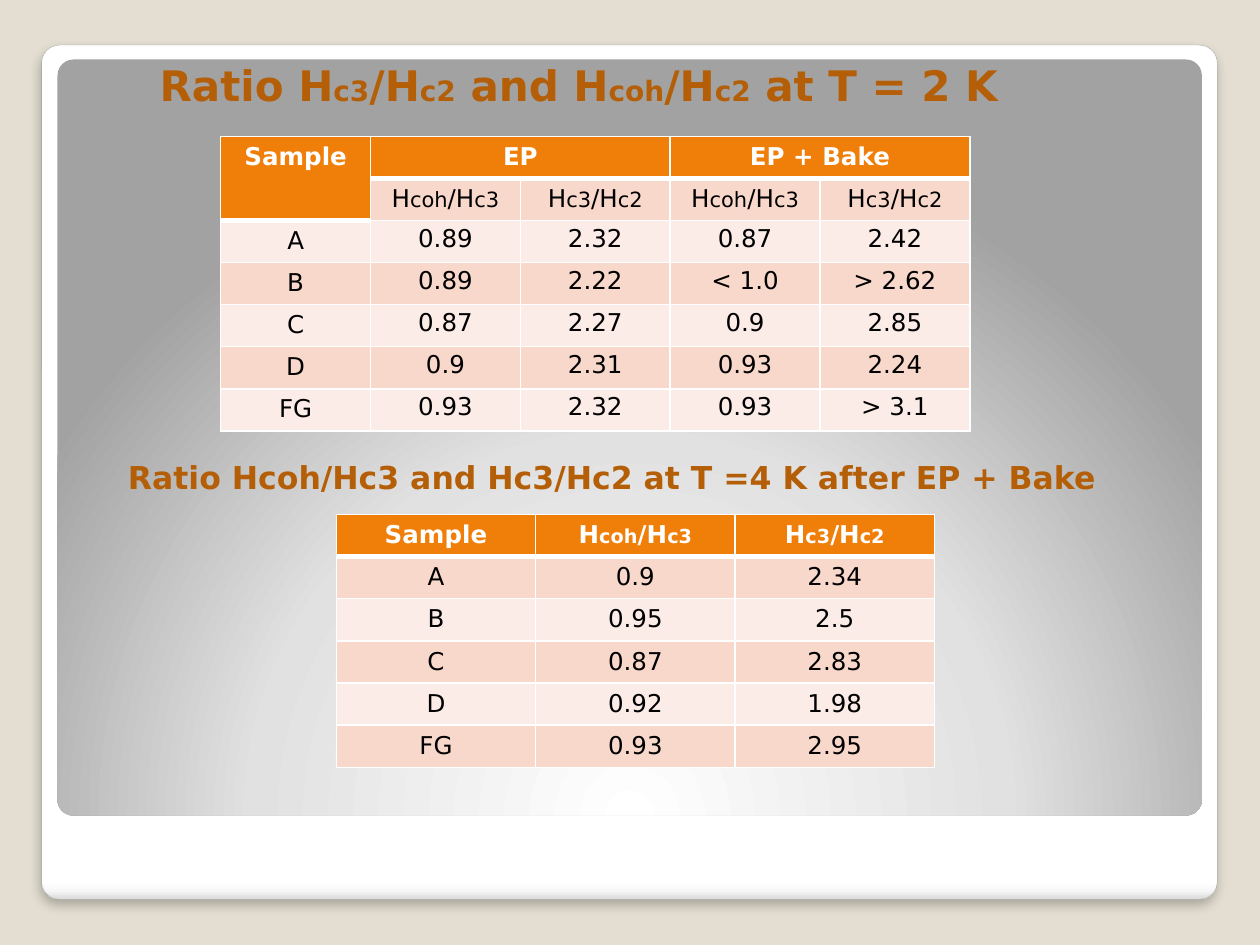
from pptx import Presentation
from pptx.dml.color import RGBColor
from pptx.enum.shapes import MSO_SHAPE as Shape
from pptx.enum.text import MSO_ANCHOR as Anchor, PP_ALIGN as Align
from pptx.oxml import parse_xml
from pptx.oxml.ns import nsdecls, qn
from pptx.util import Cm, Pt

WHITE = RGBColor(0xFF, 0xFF, 0xFF)
BLACK = RGBColor(0x00, 0x00, 0x00)
SAND = RGBColor(0xE3, 0xDE, 0xD1)
GREY = RGBColor(0xA4, 0xA4, 0xA4)
BROWN = RGBColor(0xB4, 0x5F, 0x07)
ORANGE = RGBColor(0xF0, 0x7F, 0x09)
ROSE = RGBColor(0xF9, 0xD8, 0xCC)
PALE_ROSE = RGBColor(0xFC, 0xEC, 0xE7)

DOWNWARD = '<a:lin ang="5400000" scaled="0"/>'
FROM_BELOW = ('<a:path path="circle">'
              '<a:fillToRect l="50000" t="175000" r="50000" b="-75000"/></a:path>')
FRAME_STOPS = [(0, WHITE), (98, WHITE), (99, "F7F7F7"), (100, "DADADA")]
PANEL_STOPS = [(0, WHITE), (55, "E1E1E1"), (100, "A2A2A2")]

TIGHT_CELL = {"margin_left": Cm(0.18), "margin_right": Cm(0.18),
              "margin_top": 0, "margin_bottom": 0}
TIGHT_PARAGRAPH = {"line_spacing": 1.15, "space_after": Pt(10)}

RATIOS = ["H_coh_/H_c3_", "H_c3_/H_c2_"]
RATIOS_2K = [
    ["Sample", "EP", "", "EP + Bake", ""],
    ["", *RATIOS, *RATIOS],
    ["A", "0.89", "2.32", "0.87", "2.42"],
    ["B", "0.89", "2.22", "< 1.0", "> 2.62"],
    ["C", "0.87", "2.27", "0.9", "2.85"],
    ["D", "0.9", "2.31", "0.93", "2.24"],
    ["FG", "0.93", "2.32", "0.93", "> 3.1"],
]
RATIOS_4K = [
    ["Sample", *RATIOS],
    ["A", "0.9", "2.34"],
    ["B", "0.95", "2.5"],
    ["C", "0.87", "2.83"],
    ["D", "0.92", "1.98"],
    ["FG", "0.93", "2.95"],
]


def apply(target, values):
    for name, value in values.items():
        setattr(target, name, value)


class SlideBuilder:
    font_name = "DejaVu Sans"

    def __init__(self, slide):
        self.slide = slide

    def background(self, color):
        fill = self.slide.background.fill
        fill.solid()
        fill.fore_color.rgb = color

    def add_runs(self, paragraph, text, color, size, small, bold):
        """Add runs; parts between underscores take the small size."""
        for index, part in enumerate(text.split("_")):
            if index and not part:
                continue
            run = paragraph.add_run()
            run.text = part
            apply(run.font, {"name": self.font_name, "bold": bold,
                             "size": Pt(small if index % 2 else size)})
            run.font.color.rgb = color

    def panel(self, left, top, width, height, stops, direction):
        """Add a rounded rectangle with a gradient fill and no line."""
        shape = self.slide.shapes.add_shape(
            Shape.ROUNDED_RECTANGLE, Cm(left), Cm(top), Cm(width), Cm(height))
        shape.adjustments[0] = 0.021
        shape.shadow.inherit = False
        shape.line.fill.background()
        shape.fill.background()
        stop_list = "".join(
            f'<a:gs pos="{percent * 1000}"><a:srgbClr val="{color}"/></a:gs>'
            for percent, color in stops)
        properties = shape._element.spPr
        properties.replace(properties.find(qn("a:noFill")), parse_xml(
            f'<a:gradFill {nsdecls("a")} rotWithShape="1">'
            f"<a:gsLst>{stop_list}</a:gsLst>{direction}</a:gradFill>"))
        return shape

    def shadow(self, shape):
        shape._element.spPr.find(qn("a:effectLst")).append(parse_xml(
            f'<a:outerShdw {nsdecls("a")} blurRad="{Pt(6)}" dist="{Pt(4)}" '
            'dir="5400000" rotWithShape="0"><a:srgbClr val="000000">'
            '<a:alpha val="25000"/></a:srgbClr></a:outerShdw>'))

    def heading(self, left, top, width, height, text, size, small=None,
                anchor=Anchor.TOP):
        box = self.slide.shapes.add_textbox(Cm(left), Cm(top), Cm(width), Cm(height))
        apply(box.text_frame, {"word_wrap": True, "vertical_anchor": anchor})
        self.add_runs(box.text_frame.paragraphs[0], text, BROWN, size, small, True)

    def borders(self, cell, bottom):
        properties = cell._tc.get_or_add_tcPr()
        for side, width in {"L": 1, "R": 1, "T": 1, "B": bottom}.items():
            properties.append(parse_xml(
                f'<a:ln{side} {nsdecls("a")} w="{Pt(width)}"><a:solidFill>'
                f'<a:srgbClr val="{WHITE}"/></a:solidFill></a:ln{side}>'))

    def table(self, left, top, column_width, row_height, rows, small,
              merges=(), tight_from=None):
        """Add a table; value cells from row tight_from on have no top inset."""
        columns = len(rows[0])
        table = self.slide.shapes.add_table(
            len(rows), columns, Cm(left), Cm(top),
            Cm(column_width * columns), Cm(row_height * len(rows))).table
        for column in table.columns:
            column.width = Cm(column_width)
        for row in table.rows:
            row.height = Cm(row_height)
        for first, last in merges:
            table.cell(*first).merge(table.cell(*last))
        for row_index, texts in enumerate(rows):
            for column_index, text in enumerate(texts):
                cell = table.cell(row_index, column_index)
                header = row_index == 0 or cell.is_spanned
                paragraph = cell.text_frame.paragraphs[0]
                paragraph.alignment = Align.CENTER
                if tight_from and row_index >= tight_from and column_index:
                    apply(cell, TIGHT_CELL)
                    apply(paragraph, TIGHT_PARAGRAPH)
                self.borders(cell, bottom=3 if header else 1)
                cell.fill.solid()
                band = ROSE if row_index % 2 else PALE_ROSE
                cell.fill.fore_color.rgb = ORANGE if header else band
                self.add_runs(paragraph, text, WHITE if header else BLACK,
                              14, small, header)


def main():
    presentation = Presentation()
    apply(presentation, {"slide_width": Cm(25.4), "slide_height": Cm(19.05)})
    builder = SlideBuilder(
        presentation.slides.add_slide(presentation.slide_layouts[6]))
    builder.background(SAND)

    frame = builder.panel(0.84, 0.91, 23.7, 17.22, FRAME_STOPS, DOWNWARD)
    frame.line.color.rgb = GREY
    frame.line.width = Pt(0.16)
    builder.shadow(frame)
    builder.panel(1.16, 1.2, 23.07, 15.24, PANEL_STOPS, FROM_BELOW)

    builder.heading(2.97, 1.27, 19.48, 1.07,
                    "Ratio H_c3_/H_c2_ and H_coh_/H_c2_ at T = 2 K",
                    24, 16, Anchor.BOTTOM)
    builder.table(4.45, 2.75, 3.02, 0.84, RATIOS_2K, 12, tight_from=2,
                  merges=[((0, 0), (1, 0)), ((0, 1), (0, 2)), ((0, 3), (0, 4))])
    builder.heading(2.33, 9.1, 20.52, 1.02,
                    "Ratio Hcoh/Hc3 and Hc3/Hc2 at T =4 K after EP + Bake", 18)
    builder.table(6.78, 10.37, 4.02, 0.85, RATIOS_4K, 11)

    presentation.save("out.pptx")


if __name__ == "__main__":
    main()
